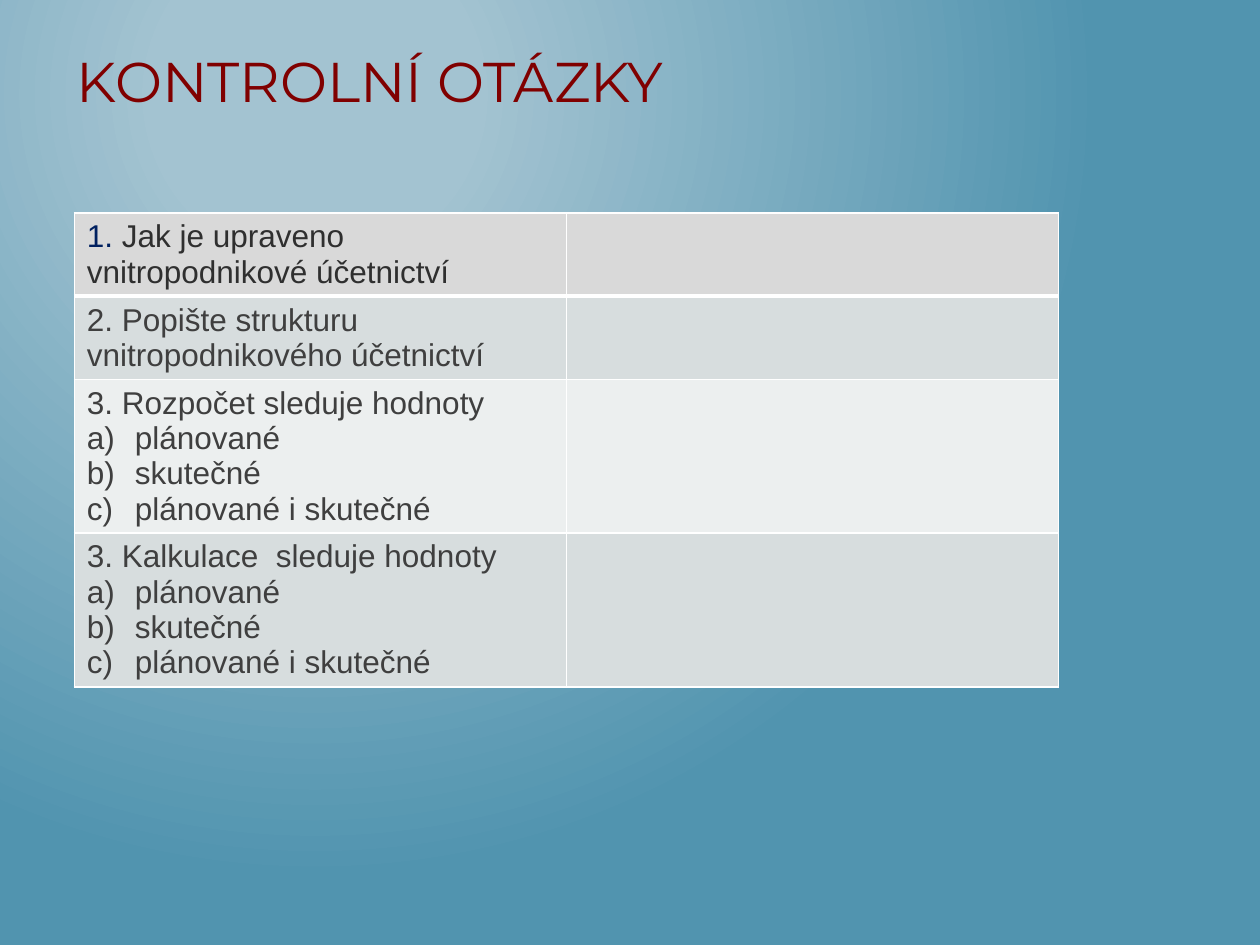
from pptx import Presentation
from pptx.dml.color import RGBColor
from pptx.enum.text import MSO_ANCHOR as Anchor
from pptx.oxml import parse_xml
from pptx.oxml.ns import nsdecls
from pptx.util import Inches, Pt


def color(value):
    return RGBColor.from_string(value)


def add_span(para, text, ink, look):
    span = para.add_run()
    span.text = text
    for name, value in look.items():
        setattr(span.font, name, value)
    span.font.color.rgb = color(ink)


TITLE_LOOK = {"name": "Montserrat", "size": Pt(32), "bold": False}
CELL_LOOK = {"name": "Arial", "size": Pt(18), "bold": False}
DARK, GRAY = "2F2F2F", "3F3F3F"
ANSWERS = ["plánované", "skutečné", "plánované i skutečné"]
QUESTIONS = [
    ("D9D9D9", 0.66, [("1. ", "002060"), ("Jak je upraveno vnitropodnikové účetnictví", DARK)], []),
    ("D7DDDE", 0.66, [("2. Popište strukturu vnitropodnikového účetnictví", GRAY)], []),
    ("ECEFEF", 1.22, [("3. Rozpočet sleduje hodnoty", GRAY)], ANSWERS),
    ("D7DDDE", 1.22, [("3. Kalkulace  sleduje hodnoty", GRAY)], ANSWERS),
]

deck = Presentation()
deck.slide_width, deck.slide_height = Inches(10), Inches(7.5)
page = deck.slides.add_slide(deck.slide_layouts[6])

page.background.fill.solid()
backdrop = page.background.fill._xPr
backdrop.replace(backdrop[0], parse_xml(
    f'<a:gradFill {nsdecls("a")} rotWithShape="1"><a:gsLst>'
    '<a:gs pos="20000"><a:srgbClr val="A3C3D1"/></a:gs>'
    '<a:gs pos="100000"><a:srgbClr val="5194AF"/></a:gs></a:gsLst>'
    '<a:path path="circle"><a:fillToRect l="50000" t="20000" r="100000" b="100000"/></a:path>'
    '</a:gradFill>'))

table = page.shapes.add_table(
    len(QUESTIONS), 2, Inches(0.59), Inches(1.69), Inches(7.81), Inches(3.76)).table
table.first_row = table.horz_banding = False

for row, (fill, height, question, answers) in enumerate(QUESTIONS):
    table.rows[row].height = Inches(height)
    for cell in table.rows[row].cells:
        props = cell._tc.get_or_add_tcPr()
        for side in "LRTB":
            heavy = (row, side) in [(0, "B"), (1, "T")]
            props.append(parse_xml(
                f'<a:ln{side} {nsdecls("a")} w="{Pt(3 if heavy else 1)}"><a:solidFill>'
                f'<a:srgbClr val="FFFFFF"/></a:solidFill></a:ln{side}>'))
        cell.fill.solid()
        cell.fill.fore_color.rgb = color(fill)
        cell.text_frame.paragraphs[0].font.size = Pt(18)

    frame = table.cell(row, 0).text_frame
    for text, ink in question:
        add_span(frame.paragraphs[0], text, ink, CELL_LOOK)
    for answer in answers:
        para = frame.add_paragraph()
        add_span(para, answer, GRAY, CELL_LOOK)
        indent = para._p.get_or_add_pPr()
        indent.set("marL", str(Inches(0.38)))
        indent.set("indent", str(-Inches(0.38)))
        indent.append(parse_xml(f'<a:buAutoNum {nsdecls("a")} type="alphaLcParenR"/>'))

title = page.shapes.add_textbox(Inches(0.51), Inches(0.28), Inches(7.87), Inches(0.71))
title.text_frame.word_wrap = True
title.text_frame.vertical_anchor = Anchor.MIDDLE
add_span(title.text_frame.paragraphs[0], "KONTROLNÍ OTÁZKY", "800000", TITLE_LOOK)

deck.save("out.pptx")
